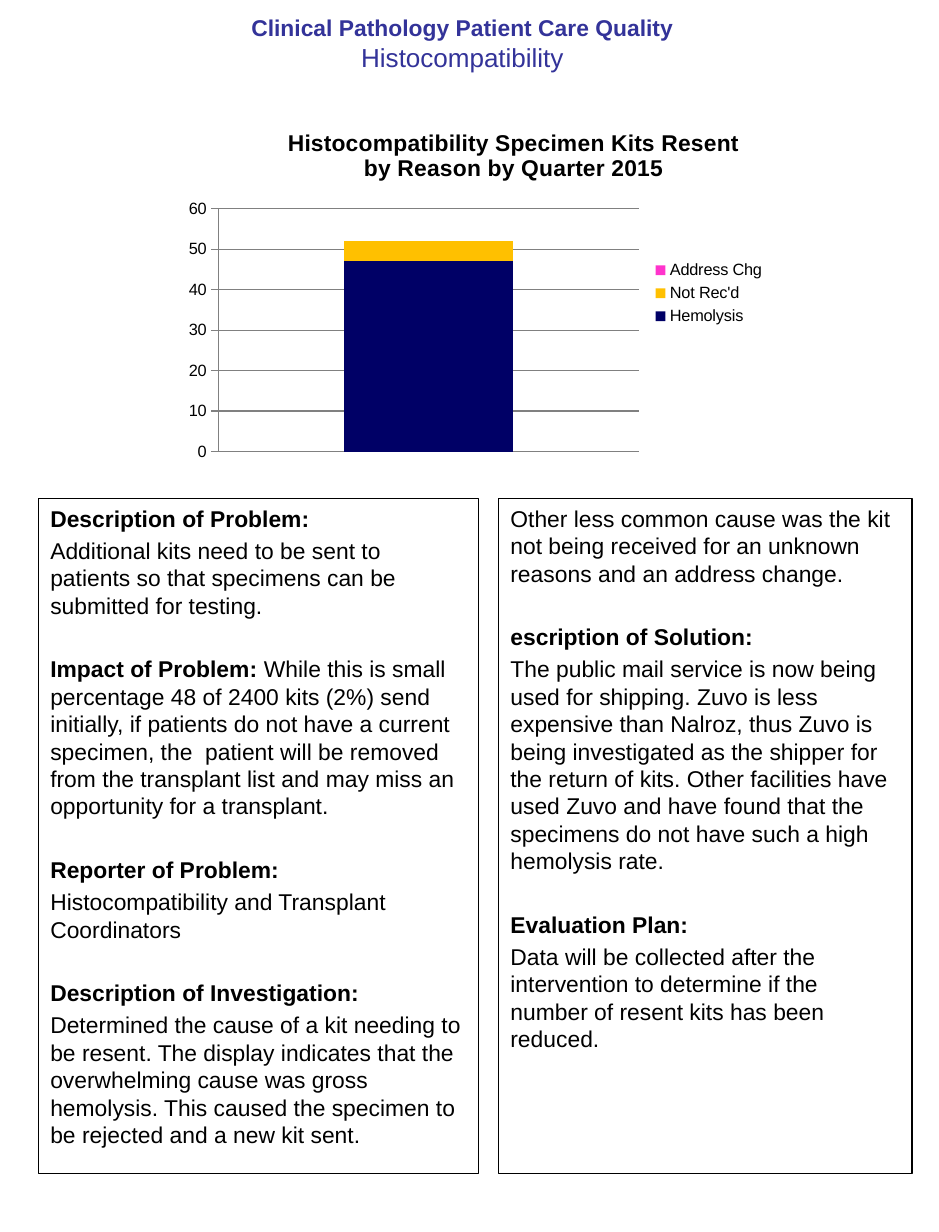
from dataclasses import dataclass

from lxml import etree
from pptx import Presentation
from pptx import util as u
from pptx.chart.data import CategoryChartData
from pptx.dml.color import RGBColor
from pptx.enum import chart as ch, shapes, text
from pptx.oxml.ns import qn


@dataclass(frozen=True)
class Theme:
    font: str = "Arial"
    ink: str = "000000"
    heading: str = "333399"
    axis: str = "808080"
    hemolysis: str = "000066"
    not_received: str = "FFC000"
    address: str = "FF33CC"
    body_size: float = 14
    subtitle_size: float = 16
    chart_size: float = 10
    line_pitch: float = 16.8
    para_gap: float = 2.8


THEME = Theme()
WIDTH, HEIGHT = u.Inches(8), u.Inches(10.5)
PANEL_TOP, PANEL_HEIGHT = 4.25, 5.75

# Each section is a list of paragraphs; each paragraph a list of (words, bold).
PROBLEM = [
    [[("Description of Problem:", True)],
     [("Additional kits need to be sent to patients so that specimens can be "
       "submitted for testing.", False)]],
    [[("Impact of Problem: ", True),
      ("While this is small percentage 48 of 2400 kits (2%) send initially, if "
       "patients do not have a current specimen, the  patient will be removed from "
       "the transplant list and may miss an opportunity for a transplant.", False)]],
    [[("Reporter of Problem:", True)],
     [("Histocompatibility and Transplant Coordinators", False)]],
    [[("Description of Investigation:", True)],
     [("Determined the cause of a kit needing to be resent. The display indicates "
       "that the overwhelming cause was gross hemolysis. This caused the specimen "
       "to be rejected and a new kit sent.", False)]],
]
SOLUTION = [
    [[("Other less common cause was the kit not being received for an unknown "
       "reasons and an address change.", False)]],
    [[("escription of Solution:", True)],
     [("The public mail service is now being used for shipping. Zuvo is less "
       "expensive than Nalroz, thus Zuvo is being investigated as the shipper for "
       "the return of kits. Other facilities have used Zuvo and have found that the "
       "specimens do not have such a high hemolysis rate.", False)]],
    [[("Evaluation Plan:", True)],
     [("Data will be collected after the intervention to determine if the number "
       "of resent kits has been reduced.", False)]],
]
RESENT_KITS = [("Hemolysis", 47, THEME.hemolysis),
               ("Not Rec'd", 5, THEME.not_received),
               ("Address Chg", 0, THEME.address)]


def style_font(font, size, color=THEME.ink, bold=False):
    font.name, font.size, font.bold = THEME.font, u.Pt(size), bold
    font.color.rgb = RGBColor.from_string(color)


def add_run(paragraph, words, size, color=THEME.ink, bold=False):
    run = paragraph.add_run()
    run.text = words
    style_font(run.font, size, color, bold)


def set_insets(frame):
    frame.margin_left = frame.margin_right = u.Inches(0.1)
    frame.margin_top = frame.margin_bottom = u.Inches(0.05)
    frame.word_wrap = True


def place_title(title):
    title.left, title.top = u.Inches(0.34), u.Inches(0.08)
    title.width, title.height = u.Inches(7.2), u.Inches(0.58)
    frame = title.text_frame
    set_insets(frame)
    frame.auto_size = text.MSO_AUTO_SIZE.NONE
    frame.vertical_anchor = text.MSO_ANCHOR.MIDDLE
    heading = frame.paragraphs[0]
    heading.alignment = text.PP_ALIGN.CENTER
    add_run(heading, "Clinical Pathology Patient Care Quality",
            THEME.body_size, THEME.heading, True)
    heading.add_line_break()
    add_run(heading, "Histocompatibility", THEME.subtitle_size, THEME.heading)


def add_panel(slide, left, width, sections):
    """Outlined column of text with one empty line's height between sections."""
    panel = slide.shapes.add_shape(
        shapes.MSO_SHAPE.RECTANGLE, u.Inches(left), u.Inches(PANEL_TOP),
        u.Inches(width), u.Inches(PANEL_HEIGHT))
    panel.shadow.inherit = False
    panel.fill.background()
    panel.line.color.rgb = RGBColor.from_string(THEME.ink)
    panel.line.width = u.Pt(0.75)
    frame = panel.text_frame
    set_insets(frame)
    frame.vertical_anchor = text.MSO_ANCHOR.TOP
    section_gap = THEME.line_pitch + 2 * THEME.para_gap
    for s, section in enumerate(sections):
        for p, runs in enumerate(section):
            first = s == p == 0
            paragraph = frame.paragraphs[0] if first else frame.add_paragraph()
            paragraph.alignment = text.PP_ALIGN.LEFT
            paragraph.line_spacing = u.Pt(THEME.line_pitch)
            if not first:
                paragraph.space_before = u.Pt(THEME.para_gap if p else section_gap)
            for words, bold in runs:
                add_run(paragraph, words, THEME.body_size, bold=bold)


def set_layout(parent, index, **shares):
    """Fix a chart part's place, in shares of the chart's size."""
    for old in parent.findall(qn("c:layout")):
        parent.remove(old)
    layout = etree.Element(qn("c:layout"))
    manual = etree.SubElement(layout, qn("c:manualLayout"))
    if "w" in shares:
        etree.SubElement(manual, qn("c:layoutTarget")).set("val", "inner")
    for tag, value in [("xMode", "edge"), ("yMode", "edge"), *shares.items()]:
        etree.SubElement(manual, qn(f"c:{tag}")).set("val", str(value))
    parent.insert(index, layout)


def add_kit_chart(slide):
    data = CategoryChartData()
    data.categories = ["1"]
    for name, kits, _ in RESENT_KITS:
        data.add_series(name, [kits])
    chart = slide.shapes.add_chart(
        ch.XL_CHART_TYPE.COLUMN_STACKED, u.Inches(1.5), u.Inches(1),
        u.Inches(5.12), u.Inches(3), data).chart
    style_font(chart.font, THEME.chart_size)

    chart.has_title = True
    frame = chart.chart_title.text_frame
    add_run(frame.paragraphs[0], "Histocompatibility Specimen Kits Resent",
            THEME.body_size, bold=True)
    add_run(frame.add_paragraph(), "by Reason by Quarter 2015",
            THEME.body_size, bold=True)
    chart.chart_title.include_in_layout = False
    set_layout(chart.element.find(".//" + qn("c:title")), 1, x=0.18, y=0.02)
    set_layout(chart.element.find(".//" + qn("c:plotArea")), 0,
               x=0.07, y=0.26, w=0.7, h=0.69)

    plot = chart.plots[0]
    plot.gap_width, plot.overlap, plot.vary_by_categories = 150, 100, False
    for series, (_, _, color) in zip(plot.series, RESENT_KITS):
        series.format.fill.solid()
        series.format.fill.fore_color.rgb = RGBColor.from_string(color)

    chart.category_axis.visible = False
    axis = chart.value_axis
    axis.minimum_scale, axis.maximum_scale, axis.major_unit = 0, 60, 10
    axis.major_tick_mark = ch.XL_TICK_MARK.OUTSIDE
    axis.has_major_gridlines = True
    for line in (axis.format.line, axis.major_gridlines.format.line):
        line.color.rgb = RGBColor.from_string(THEME.axis)
        line.width = u.Pt(0.75)

    chart.has_legend = True
    chart.legend.position = ch.XL_LEGEND_POSITION.RIGHT
    chart.legend.include_in_layout = False
    style_font(chart.legend.font, THEME.chart_size)


def main():
    deck = Presentation()
    deck.slide_width, deck.slide_height = WIDTH, HEIGHT
    slide = deck.slides.add_slide(deck.slide_layouts.get_by_name("Title Only"))
    place_title(slide.shapes.title)
    add_panel(slide, 0.33, 3.75, PROBLEM)
    add_panel(slide, 4.25, 3.52, SOLUTION)
    add_kit_chart(slide)
    deck.save("out.pptx")


if __name__ == "__main__":
    main()
